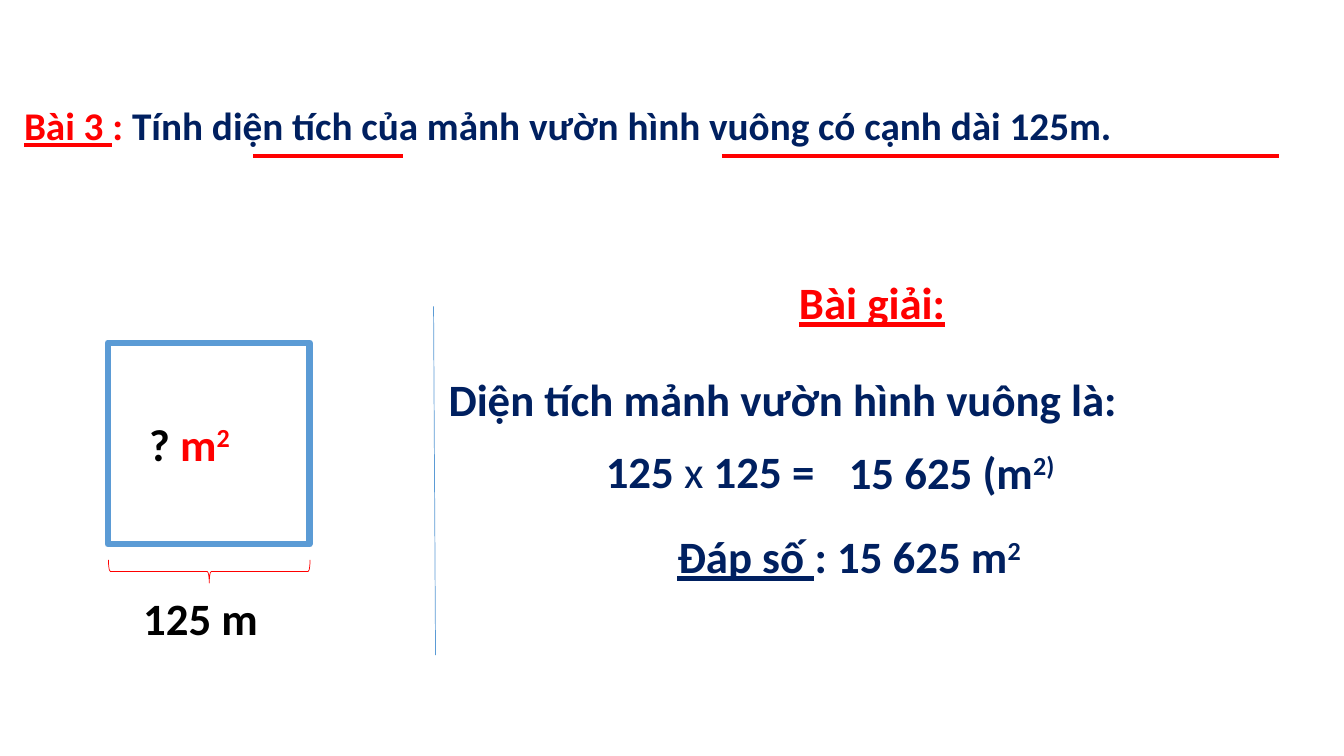
from dataclasses import dataclass

from lxml.etree import SubElement
from pptx import Presentation
from pptx.dml.color import RGBColor
from pptx.enum.shapes import MSO_CONNECTOR, MSO_SHAPE
from pptx.enum.text import MSO_ANCHOR, MSO_AUTO_SIZE, PP_ALIGN
from pptx.oxml.ns import qn
from pptx.shapes.autoshape import Shape
from pptx.slide import Slide
from pptx.text.text import TextFrame
from pptx.util import Inches, Pt

COLORS = {
    "red": "FF0000",
    "navy": "002060",
    "black": "000000",
    "blue": "5B9BD5",
    "white": "FFFFFF",
}
FONT = "Calibri"


@dataclass(frozen=True)
class Span:
    text: str
    color: str = "navy"
    bold: bool = True
    underline: bool = False
    superscript: bool = False


@dataclass(frozen=True)
class Caption:
    left: float
    top: float
    width: float
    spans: tuple[Span, ...]
    height: float = 0.64
    size: int = 32
    align: PP_ALIGN = PP_ALIGN.LEFT


@dataclass(frozen=True)
class Rule:
    start: tuple[float, float]
    end: tuple[float, float]
    color: str
    weight: float


SQUARED = Span("2", superscript=True)

CAPTIONS = (
    Caption(0.14, 0.96, 13.03, (
        Span("Bài 3 ", "red", underline=True),
        Span(": ", "red"),
        Span("Tính diện tích của mảnh vườn hình vuông có cạnh dài 125m."),
    ), height=0.57, size=28),
    Caption(1.07, 5.81, 1.84, (Span("125 m", "black"),), align=PP_ALIGN.CENTER),
    Caption(7.16, 2.68, 2.98, (Span("Bài giải:", "red", underline=True),),
            align=PP_ALIGN.CENTER),
    Caption(4.35, 3.64, 8.98, (Span("Diện tích mảnh vườn hình vuông là:"),)),
    Caption(5.91, 4.35, 3.02, (Span("125 "), Span("x", bold=False), Span(" 125 ="))),
    Caption(8.32, 4.36, 3.64, (Span("15 625 (m"), Span("2)", superscript=True))),
    Caption(6.62, 5.2, 5.77, (
        Span("Đáp số ", underline=True), Span(": 15 625 m"), SQUARED,
    )),
)

RULES = (
    Rule((2.51, 1.55), (4, 1.55), "red", 3),
    Rule((7.16, 1.55), (12.69, 1.55), "red", 3),
    Rule((4.3, 3.04), (4.32, 6.5), "blue", 0.5),
)


def rgb(name: str) -> RGBColor:
    return RGBColor.from_string(COLORS[name])


def write_spans(frame: TextFrame, spans: tuple[Span, ...], size: int,
                align: PP_ALIGN) -> None:
    paragraph = frame.paragraphs[0]
    paragraph.alignment = align
    for span in spans:
        run = paragraph.add_run()
        run.text = span.text
        run.font.name = FONT
        run.font.size = Pt(size)
        run.font.bold = span.bold
        run.font.underline = span.underline
        run.font.color.rgb = rgb(span.color)
        if span.superscript:
            run._r.get_or_add_rPr().set("baseline", "30000")


def add_caption(slide: Slide, caption: Caption) -> None:
    box = slide.shapes.add_textbox(Inches(caption.left), Inches(caption.top),
                                   Inches(caption.width), Inches(caption.height))
    frame = box.text_frame
    frame.word_wrap = True
    frame.auto_size = MSO_AUTO_SIZE.SHAPE_TO_FIT_TEXT
    write_spans(frame, caption.spans, caption.size, caption.align)


def add_rule(slide: Slide, rule: Rule) -> None:
    line = slide.shapes.add_connector(MSO_CONNECTOR.STRAIGHT,
                                      *map(Inches, rule.start + rule.end))
    line.line.color.rgb = rgb(rule.color)
    line.line.width = Pt(rule.weight)
    SubElement(line._element.spPr, qn("a:effectLst"))


def add_outline(slide: Slide, preset: MSO_SHAPE, left: float, top: float,
                width: float, height: float, color: str, weight: float) -> Shape:
    """Add an unfilled preset shape without a shadow."""
    shape = slide.shapes.add_shape(preset, Inches(left), Inches(top),
                                   Inches(width), Inches(height))
    shape.shadow.inherit = False
    shape.fill.background()
    shape.line.color.rgb = rgb(color)
    shape.line.width = Pt(weight)
    return shape


def add_garden(slide: Slide) -> None:
    """Draw the square garden with its unknown area and the brace below it."""
    garden = add_outline(slide, MSO_SHAPE.RECTANGLE, 1.07, 3.4, 2, 2, "blue", 4.5)
    garden.fill.solid()
    garden.fill.fore_color.rgb = rgb("white")
    frame = garden.text_frame
    frame.margin_left = Inches(0.41)
    frame.vertical_anchor = MSO_ANCHOR.MIDDLE
    area = (Span("? ", "black"), Span("m", "red"), Span("2", "red", superscript=True))
    write_spans(frame, area, 32, PP_ALIGN.LEFT)

    brace = add_outline(slide, MSO_SHAPE.RIGHT_BRACE, 1.96, 4.67, 0.23, 2, "red", 0.5)
    brace.rotation = 90


def main() -> None:
    deck = Presentation()
    deck.slide_width = Inches(13.33)
    deck.slide_height = Inches(7.5)
    slide = deck.slides.add_slide(deck.slide_layouts[6])
    for rule in RULES:
        add_rule(slide, rule)
    add_garden(slide)
    for caption in CAPTIONS:
        add_caption(slide, caption)
    deck.save("out.pptx")


if __name__ == "__main__":
    main()
